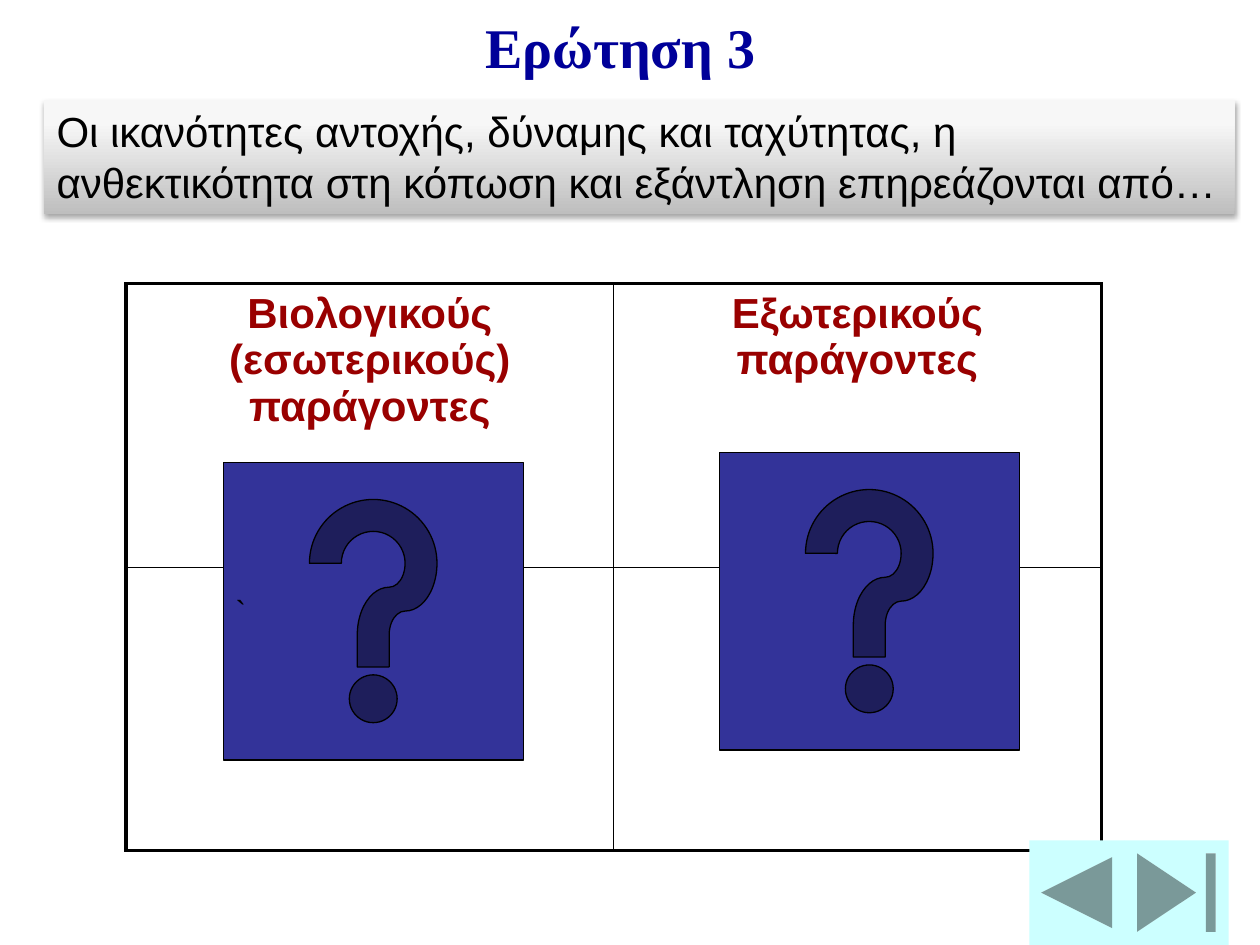
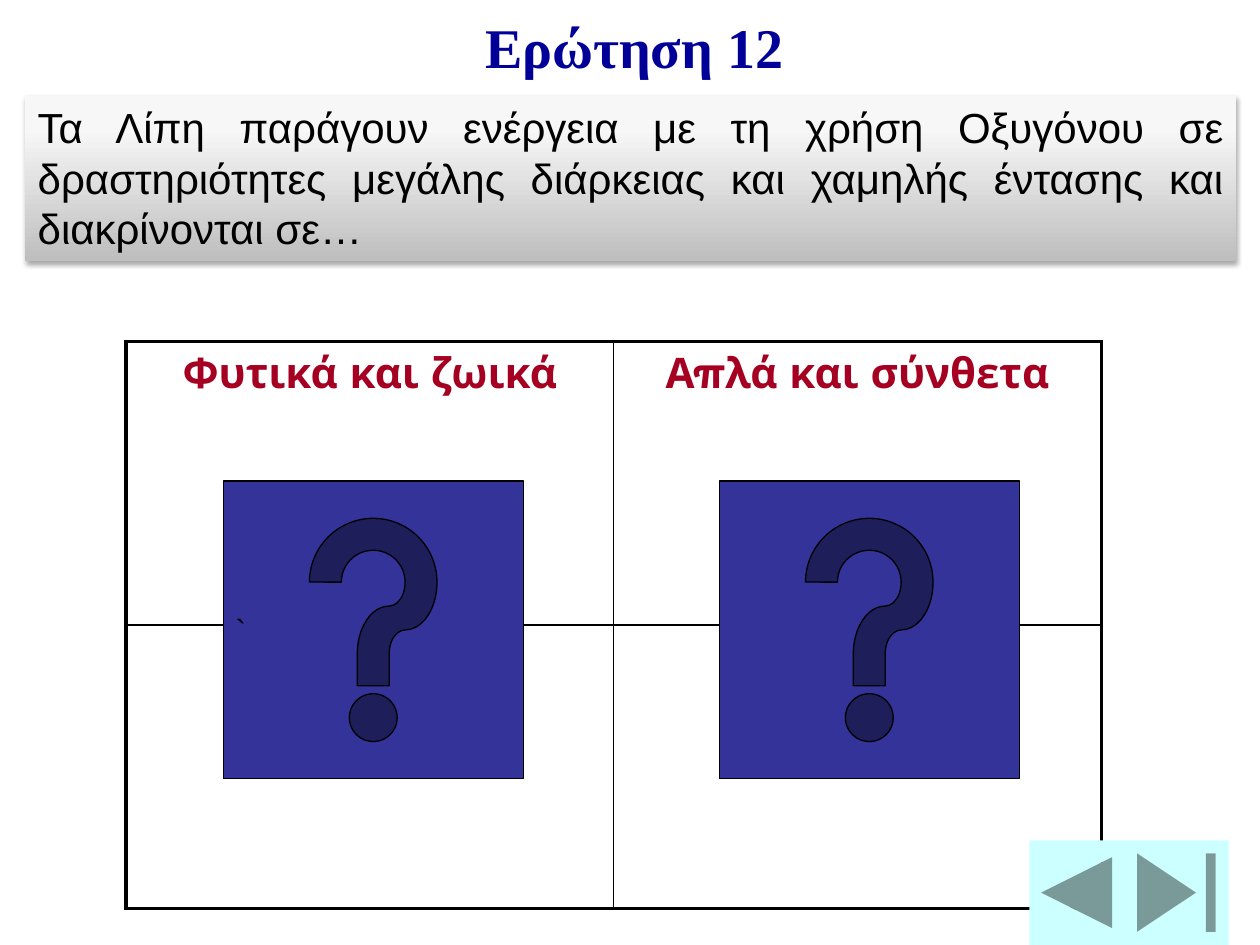
"""Builds two quiz slides, each with a question and two covered answers."""
from lxml import etree
from pptx import Presentation
from pptx.dml.color import RGBColor
from pptx.enum import shapes, text
from pptx.oxml import parse_xml
from pptx.oxml.ns import nsdecls
from pptx.util import Cm, Pt

NAVY = RGBColor(0x00, 0x00, 0x99)
INDIGO = RGBColor(0x33, 0x33, 0x99)
AQUA = RGBColor(0xCC, 0xFF, 0xFF)
BLACK = RGBColor(0, 0, 0)
WHITE = RGBColor(0xFF, 0xFF, 0xFF)
DARK_RED = RGBColor(0x99, 0x00, 0x00)
CRIMSON = RGBColor(0xA5, 0x00, 0x21)
BANNER_STOPS = [(0, RGBColor(0xBE, 0xBE, 0xBE)), (80, RGBColor(0xF7, 0xF7, 0xF7)),
                (100, RGBColor(0xF8, 0xF8, 0xF8))]

LEFT, JUSTIFY = text.PP_ALIGN.LEFT, text.PP_ALIGN.JUSTIFY
BUTTON = shapes.MSO_SHAPE

QUESTIONS = [
    {"title": "Ερώτηση 3",
     "question": "Οι ικανότητες αντοχής, δύναμης και ταχύτητας, η ανθεκτικότητα "
                 "στη κόπωση και εξάντληση επηρεάζονται από…",
     "banner": (0.89, 2.01, 24, 2.31), "align": LEFT,
     "answers": ["Βιολογικούς (εσωτερικούς) παράγοντες", "Εξωτερικούς παράγοντες"],
     "answer_font": "Arial", "answer_color": DARK_RED,
     "table_top": 5.72, "cover_tops": (9.32, 9.12)},
    {"title": "Ερώτηση 12",
     "question": "Τα Λίπη παράγουν ενέργεια με τη χρήση Οξυγόνου σε δραστηριότητες "
                 "μεγάλης διάρκειας και χαμηλής έντασης και διακρίνονται σε…",
     "banner": (0.51, 1.93, 24.41, 3.33), "align": JUSTIFY,
     "answers": ["Φυτικά και ζωικά", "Απλά και σύνθετα"],
     "answer_font": "Montserrat", "answer_color": CRIMSON,
     "table_top": 6.88, "cover_tops": (9.7, 9.7)},
]
COVERS = [(4.5, "`"), (14.5, "")]
COVER_SIZE = (6.05, 6)
NAVIGATION = [(BUTTON.ACTION_BUTTON_END, 22.66, 2.11),
              (BUTTON.ACTION_BUTTON_BACK_OR_PREVIOUS, 20.75, 1.91)]
NAVIGATION_TOP, NAVIGATION_HEIGHT = 16.94, 2.11
TABLE_LEFT, TABLE_WIDTH, TABLE_HEIGHT = 2.54, 19.66, 11.43
OUTER_BORDER, INNER_BORDER = Pt(2.25), Pt(1)


def cm(*lengths):
    return [Cm(length) for length in lengths]


def write(paragraph, words, font, size, color, bold=False, align=LEFT):
    paragraph.text = words
    paragraph.alignment = align
    paragraph.font.name = font
    paragraph.font.size = Pt(size)
    paragraph.font.bold = bold
    paragraph.font.color.rgb = color


def add_box(slide, preset, place, fill):
    box = slide.shapes.add_shape(preset, *cm(*place))
    box.shadow.inherit = False
    box.fill.solid()
    box.fill.fore_color.rgb = fill
    box.line.fill.background()
    return box


def add_title(slide, title):
    frame = slide.shapes.add_textbox(*cm(9.53, 0.13, 6.78, 1.63)).text_frame
    frame.word_wrap = True
    write(frame.paragraphs[0], title, "Times New Roman", 32, NAVY, bold=True)


def add_banner(slide, entry):
    banner = add_box(slide, BUTTON.RECTANGLE, entry["banner"], WHITE)
    properties = banner.fill._xPr
    stops = "".join(f'<a:gs pos="{position * 1000}"><a:srgbClr val="{color}"/></a:gs>'
                    for position, color in BANNER_STOPS)
    gradient = parse_xml(f'<a:gradFill {nsdecls("a")} rotWithShape="1"><a:gsLst>{stops}</a:gsLst>'
                         '<a:lin ang="16200000" scaled="0"/></a:gradFill>')
    properties.replace(properties.eg_fillProperties, gradient)
    properties.effectLst.append(parse_xml(
        f'<a:outerShdw {nsdecls("a")} blurRad="{Pt(3.1)}" dist="{Pt(1.8)}" dir="5400000" '
        f'rotWithShape="0"><a:srgbClr val="{BLACK}"><a:alpha val="35000"/>'
        '</a:srgbClr></a:outerShdw>'))
    frame = banner.text_frame
    frame.word_wrap = True
    frame.vertical_anchor = text.MSO_ANCHOR.TOP
    write(frame.paragraphs[0], entry["question"], "Arial", 24, BLACK, align=entry["align"])


def set_borders(cell, outer_sides):
    for side in "LRTB":
        width = OUTER_BORDER if side in outer_sides else INNER_BORDER
        cell._tc.get_or_add_tcPr().append(parse_xml(
            f'<a:ln{side} {nsdecls("a")} w="{width}"><a:solidFill>'
            f'<a:srgbClr val="{BLACK}"/></a:solidFill></a:ln{side}>'))


def add_answers(slide, entry):
    table = slide.shapes.add_table(
        2, 2, *cm(TABLE_LEFT, entry["table_top"], TABLE_WIDTH, TABLE_HEIGHT)).table
    table.first_row = table.horz_banding = False
    for row, vertical in enumerate("TB"):
        for column, horizontal in enumerate("LR"):
            cell = table.cell(row, column)
            set_borders(cell, vertical + horizontal)
            cell.fill.solid()
            cell.fill.fore_color.rgb = WHITE
    for column, answer in enumerate(entry["answers"]):
        write(table.cell(0, column).text_frame.paragraphs[0], answer, entry["answer_font"], 24,
              entry["answer_color"], bold=True, align=text.PP_ALIGN.CENTER)


def add_covers(slide, tops):
    for (left, mark), top in zip(COVERS, tops):
        cover = add_box(slide, BUTTON.ACTION_BUTTON_HELP, (left, top, *COVER_SIZE), INDIGO)
        cover.line.color.rgb = BLACK
        cover.line.width = Pt(0.75)
        if mark:
            cover.text_frame.word_wrap = False
            write(cover.text_frame.paragraphs[0], mark, "Arial", 18, BLACK)


def main():
    deck = Presentation()
    deck.slide_width, deck.slide_height = cm(25.4, 19.05)
    for entry in QUESTIONS:
        slide = deck.slides.add_slide(deck.slide_layouts[6])
        add_answers(slide, entry)
        add_title(slide, entry["title"])
        add_covers(slide, entry["cover_tops"])
        for preset, left, width in NAVIGATION:
            add_box(slide, preset, (left, NAVIGATION_TOP, width, NAVIGATION_HEIGHT), AQUA)
        add_banner(slide, entry)
    deck.save("out.pptx")


if __name__ == "__main__":
    main()
